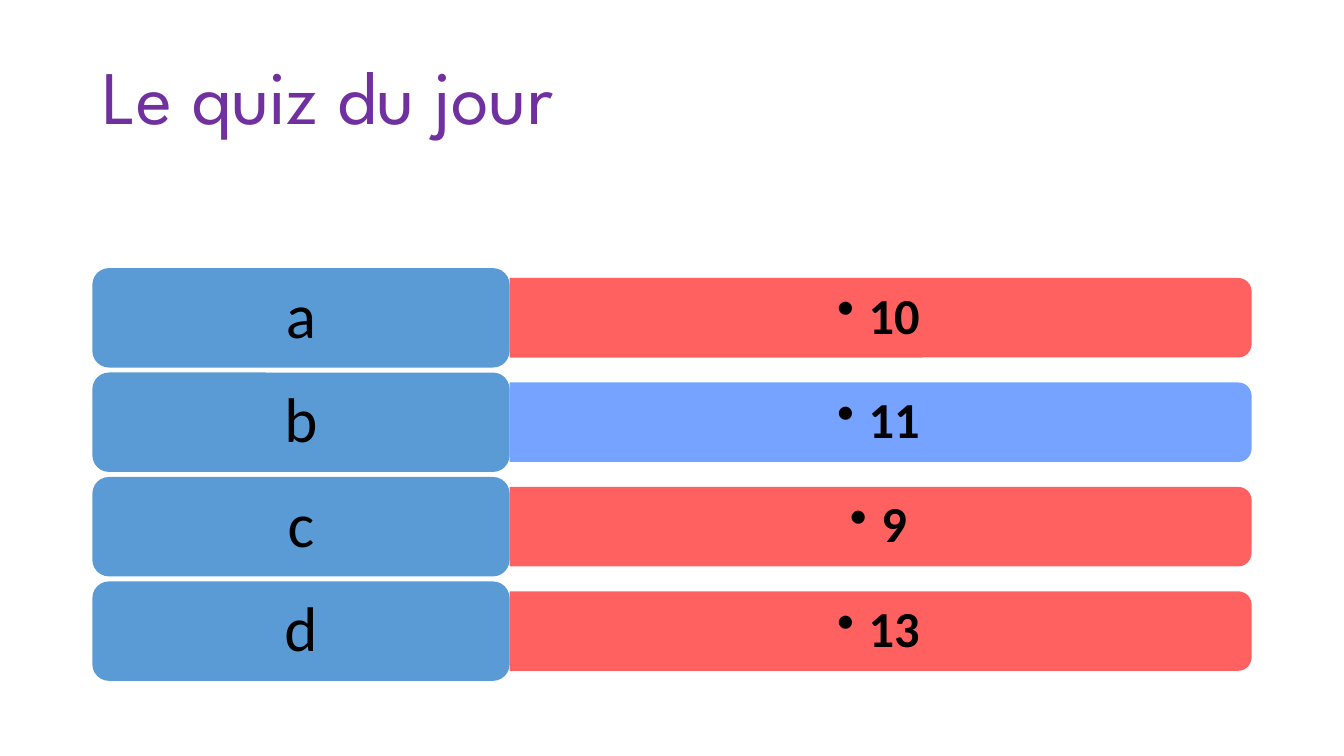
from dataclasses import dataclass

from lxml import etree
from pptx import Presentation
from pptx import util as u
from pptx.dml.color import RGBColor
from pptx.enum import shapes, text
from pptx.oxml import ns


@dataclass(frozen=True)
class Theme:
    title_color: str = "7030A0"
    ink: str = "000000"
    label_fill: str = "5B9BD5"
    wrong_fill: str = "FF5050"
    right_fill: str = "6699FF"
    title_font: str = "League Spartan"
    body_font: str = "Calibri"
    title_size: float = 54
    label_size: float = 45
    answer_size: float = 36
    bar_opacity: int = 90
    line_spacing: float = 0.9


class QuizSlide:
    def __init__(self, deck, theme):
        self.theme = theme
        self.page = deck.slides.add_slide(deck.slide_layouts[6])

    def add_words(self, shape, words, size, color, font, bold=False,
                  align=text.PP_ALIGN.CENTER, insets=(7.2, 3.6)):
        """Put one vertically centred paragraph in a shape and return it."""
        frame = shape.text_frame
        frame.word_wrap = True
        frame.vertical_anchor = text.MSO_ANCHOR.MIDDLE
        frame.margin_left = frame.margin_right = u.Pt(insets[0])
        frame.margin_top = frame.margin_bottom = u.Pt(insets[1])
        para = frame.paragraphs[0]
        para.alignment = align
        para.line_spacing = self.theme.line_spacing
        span = para.add_run()
        span.text = words
        span.font.name = font
        span.font.size = u.Pt(size)
        span.font.bold = bold
        span.font.color.rgb = RGBColor.from_string(color)
        return para

    def text_box(self, left, top, width, height):
        return self.page.shapes.add_textbox(*map(u.Pt, (left, top, width, height)))

    def block(self, kind, left, top, width, height, fill):
        shape = self.page.shapes.add_shape(kind, *map(u.Pt, (left, top, width, height)))
        shape.shadow.inherit = False
        shape.fill.solid()
        shape.fill.fore_color.rgb = RGBColor.from_string(fill)
        shape.line.fill.background()
        return shape

    def title(self, words, left, top, width, height):
        box = self.text_box(left, top, width, height)
        self.add_words(box, words, self.theme.title_size, self.theme.title_color,
                       self.theme.title_font, align=text.PP_ALIGN.LEFT)

    def label(self, words, left, top, width, height):
        box = self.block(shapes.MSO_SHAPE.ROUNDED_RECTANGLE, left, top, width, height,
                         self.theme.label_fill)
        self.add_words(box, words, self.theme.label_size, self.theme.ink,
                       self.theme.body_font, insets=(13.5, 6.75))

    def bar(self, left, top, width, height, fill):
        """Draw a bar rounded on the right: an upright shape turned by 90 degrees."""
        shift = (width - height) / 2
        bar = self.block(shapes.MSO_SHAPE.ROUND_2_SAME_RECTANGLE,
                         left + shift, top - shift, height, width, fill)
        bar.rotation = 90
        color = bar.element.spPr.find(ns.qn("a:solidFill")).find(ns.qn("a:srgbClr"))
        etree.SubElement(color, ns.qn("a:alpha"), val=str(self.theme.bar_opacity * 1000))

    def answer(self, words, left, top, width, height):
        box = self.text_box(left, top, width, height)
        para = self.add_words(box, words, self.theme.answer_size, self.theme.ink,
                              self.theme.body_font, bold=True, insets=(10.8, 5.4))
        para.level = 1
        props = para._p.get_or_add_pPr()
        indent = u.Pt(22.5)
        props.set("marL", str(indent))
        props.set("indent", str(-indent))
        etree.SubElement(props, ns.qn("a:buChar"), char="•")


def main():
    deck = Presentation()
    deck.slide_width, deck.slide_height = u.Pt(960), u.Pt(540)
    theme = Theme()
    quiz = QuizSlide(deck, theme)
    quiz.title("Le quiz du jour", 66, 19.4, 828, 104.4)

    left, first_top, row_pitch = 66, 191.5, 74.6
    label_width, label_height = 298, 71
    bar_width, bar_height = 530, 56.8
    answer_width, answer_height = 527, 51.2
    bar_left = left + label_width
    choices = [("a", "10", theme.wrong_fill), ("b", "11", theme.right_fill),
               ("c", "9", theme.wrong_fill), ("d", "13", theme.wrong_fill)]
    for row, (letter, number, fill) in enumerate(choices):
        top = first_top + row * row_pitch
        middle = top + label_height / 2
        quiz.bar(bar_left, middle - bar_height / 2, bar_width, bar_height, fill)
        quiz.answer(number, bar_left, middle - answer_height / 2,
                    answer_width, answer_height)
        quiz.label(letter, left, top, label_width, label_height)

    deck.save("out.pptx")


if __name__ == "__main__":
    main()
